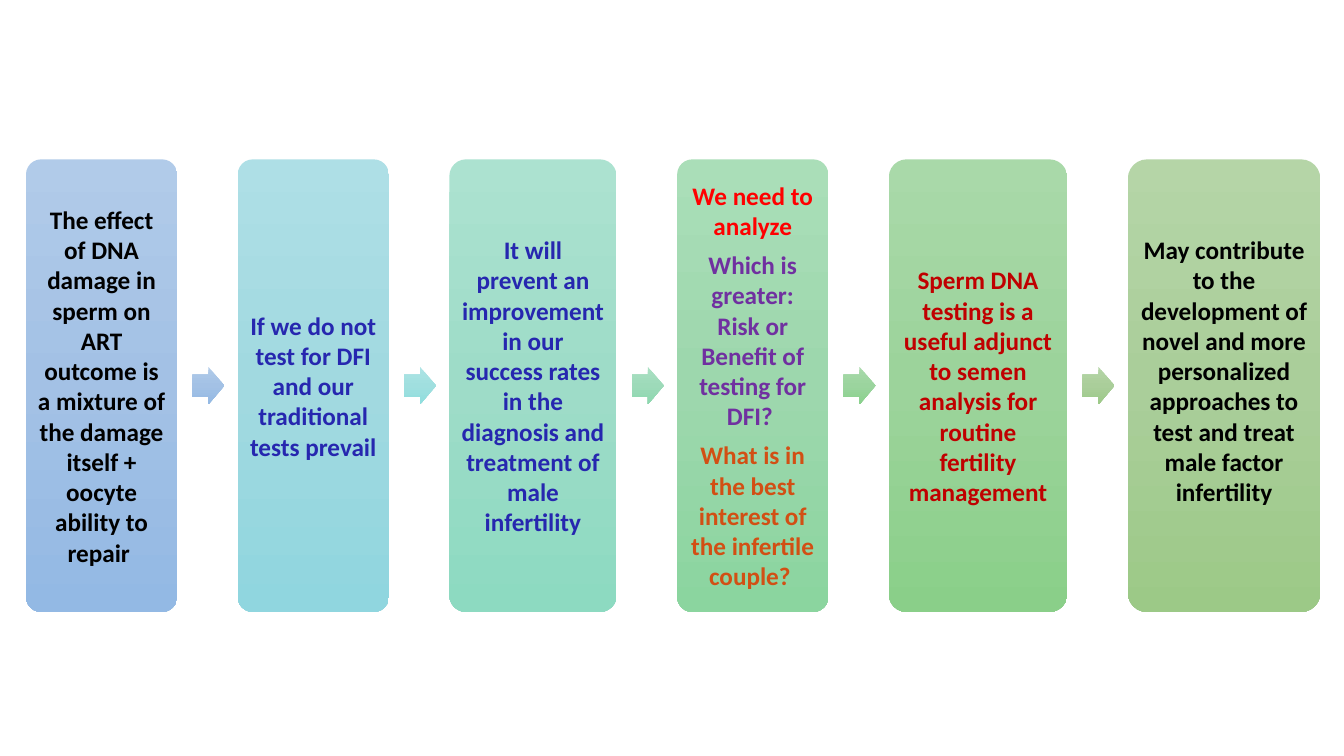
from copy import deepcopy

from pptx import Presentation
from pptx.dml.color import RGBColor
from pptx.enum.shapes import MSO_SHAPE as Shape
from pptx.enum.text import MSO_ANCHOR as Anchor, PP_ALIGN as Align
from pptx.oxml.ns import qn
from pptx.util import Pt

COLORS = {
    "black": "000000",
    "navy": "2627AF",
    "red": "FF0000",
    "purple": "7030A0",
    "orange": "D24F14",
    "crimson": "C00000",
}

GRADIENTS = {
    "blue": ("B1CBE9", "A3C1E5", "93B9E4"),
    "aqua": ("AEDFE6", "A1D9E0", "90D6DF"),
    "aqua arrow": ("AEE4E5", "A0DFDF", "8FDEDE"),
    "mint": ("ACE2D0", "9EDCC8", "8DDAC1"),
    "mint arrow": ("ABE0C3", "9DDAB9", "8CD8AF"),
    "jade": ("AADEB8", "9DD7AD", "8BD59F"),
    "jade arrow": ("A9DAAB", "9BD49E", "89D18C"),
    "green": ("A9D9A9", "9CD39B", "8ACF89"),
    "olive": ("B5D5A7", "AACE9A", "9CC987"),
}

STEPS = [
    (108, "blue", "blue", [
        ("The effect of DNA damage in sperm on ART outcome is a mixture of "
         "the damage itself + oocyte ability to repair ", "black"),
    ]),
    (108, "aqua", "aqua arrow", [
        ("If we do not test for DFI and our traditional tests prevail", "navy"),
    ]),
    (119.5, "mint", "mint arrow", [
        ("It will prevent an improvement in our success rates in the "
         "diagnosis and treatment of male infertility", "navy"),
    ]),
    (108, "jade", "jade arrow", [
        ("We need to analyze", "red"),
        ("Which is greater: Risk or Benefit of testing for DFI? ", "purple"),
        ("What is in the best interest of the infertile couple? ", "orange"),
    ]),
    (127.5, "green", "olive", [
        ("Sperm DNA testing is a useful adjunct to semen analysis for "
         "routine fertility management", "crimson"),
    ]),
    (137.5, "olive", None, [
        ("May contribute to the development of novel and more personalized "
         "approaches to test and treat male factor infertility\v", "black"),
    ]),
]

LEFT, TOP, HEIGHT, GAP = 18.6, 113.8, 323.3, 43.2
ARROW_OFFSET, ARROW_WIDTH, ARROW_HEIGHT = 10.8, 22.9, 26.8
INSET = 5


def fill_gradient(shape, gradient):
    shape.fill.gradient()
    shape.fill.gradient_angle = 270
    stop_list = shape.element.spPr.find(".//" + qn("a:gsLst"))
    stop_list.insert(1, deepcopy(stop_list[0]))
    for index, (stop, color) in enumerate(
            zip(shape.fill.gradient_stops, GRADIENTS[gradient])):
        stop.position = index / 2
        stop.color.rgb = RGBColor.from_string(color)


def add_gradient_shape(slide, kind, left, top, width, height, gradient, adjustments):
    shape = slide.shapes.add_shape(kind, Pt(left), Pt(top), Pt(width), Pt(height))
    for index, value in enumerate(adjustments):
        shape.adjustments[index] = value
    shape.shadow.inherit = False
    shape.line.fill.background()
    fill_gradient(shape, gradient)
    return shape


def write_paragraph(paragraph, text, *, color, size=18, bold=True,
                    font="Calibri", align=Align.CENTER, space_after=6.3):
    paragraph.text = text
    paragraph.alignment = align
    paragraph.space_after = Pt(space_after)
    paragraph.font.name = font
    paragraph.font.size = Pt(size)
    paragraph.font.bold = bold
    paragraph.font.color.rgb = RGBColor.from_string(COLORS[color])


def add_step(slide, left, width, gradient, paragraphs):
    box = add_gradient_shape(slide, Shape.ROUNDED_RECTANGLE, left, TOP, width,
                             HEIGHT, gradient, [0.1])
    frame = box.text_frame
    frame.word_wrap = True
    frame.vertical_anchor = Anchor.MIDDLE
    frame.margin_left = frame.margin_right = Pt(INSET)
    frame.margin_top = frame.margin_bottom = Pt(INSET)
    for index, (text, color) in enumerate(paragraphs):
        paragraph = frame.add_paragraph() if index else frame.paragraphs[0]
        write_paragraph(paragraph, text, color=color)


def add_arrow(slide, left, gradient):
    top = TOP + (HEIGHT - ARROW_HEIGHT) / 2
    add_gradient_shape(slide, Shape.RIGHT_ARROW, left, top, ARROW_WIDTH,
                       ARROW_HEIGHT, gradient, [0.6, 0.5])


def main():
    presentation = Presentation()
    presentation.slide_width = Pt(960)
    presentation.slide_height = Pt(540)
    slide = presentation.slides.add_slide(presentation.slide_layouts[6])
    left = LEFT
    for width, box_gradient, arrow_gradient, paragraphs in STEPS:
        add_step(slide, left, width, box_gradient, paragraphs)
        if arrow_gradient:
            add_arrow(slide, left + width + ARROW_OFFSET, arrow_gradient)
        left += width + GAP
    presentation.save("out.pptx")


if __name__ == "__main__":
    main()
